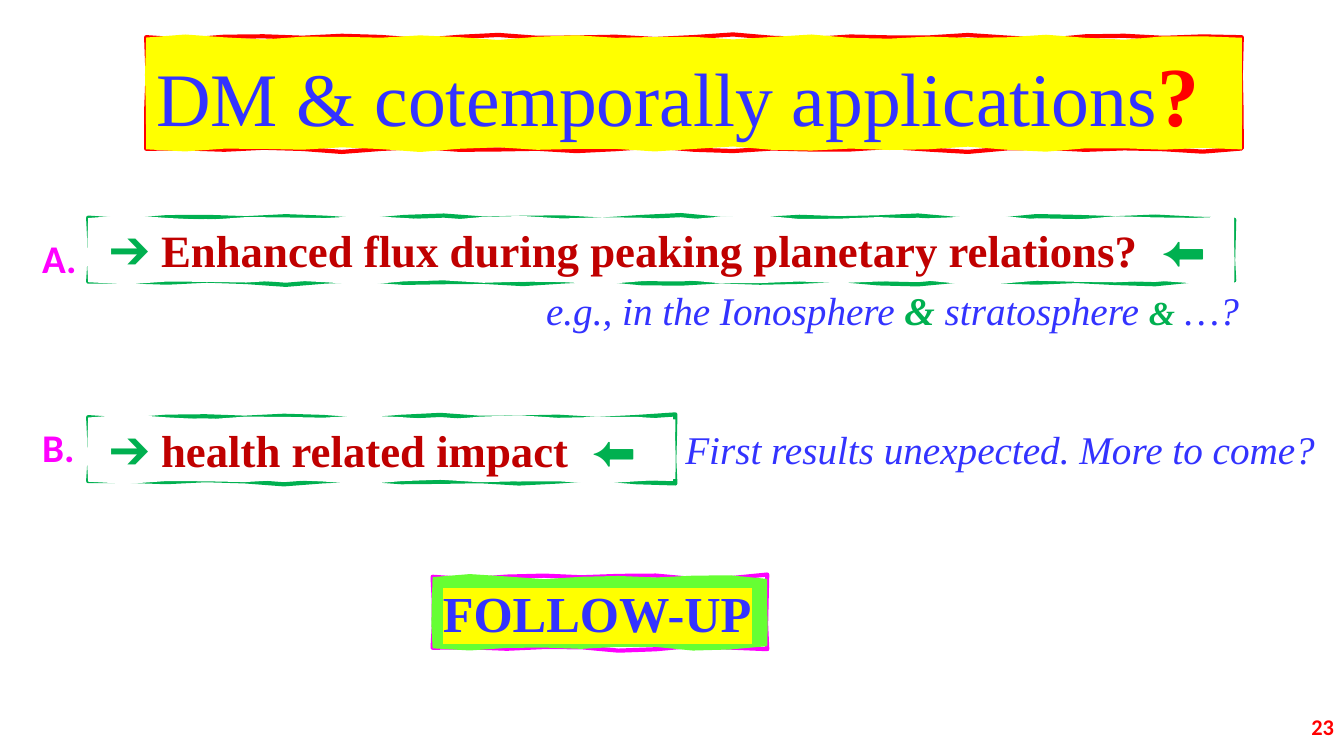
from copy import deepcopy
from dataclasses import dataclass
from math import sin

from lxml import etree
from pptx import Presentation
from pptx.dml.color import RGBColor
from pptx.enum.text import MSO_ANCHOR, PP_ALIGN
from pptx.oxml.ns import qn
from pptx.util import Pt

LEFT, MIDDLE = PP_ALIGN.LEFT, MSO_ANCHOR.MIDDLE
TITLE_ONLY = 5


@dataclass(frozen=True)
class Theme:
    serif: str = "Times New Roman"
    sans: str = "Calibri"
    blue: str = "3333FF"
    red: str = "FF0000"
    dark_red: str = "C00000"
    green: str = "00B050"
    lime: str = "66FF33"
    yellow: str = "FFFF00"
    magenta: str = "FF00FF"
    white: str = "FFFFFF"
    title: int = 54
    mark: int = 60
    closing: int = 36
    point: int = 32
    remark: int = 28
    small: int = 24
    number: int = 16
    inset: float = 7.2
    wave: float = 2
    wave_step: float = 28


THEME = Theme()


def rgb(code):
    return RGBColor.from_string(code)


# Text
def write(shape, spans, size, font=THEME.serif, bold=False, italic=False,
          left=THEME.inset, wrap=True):
    """Write one line; each span is (text, colour, overrides)."""
    frame = shape.text_frame
    frame.word_wrap = wrap
    frame.vertical_anchor = MIDDLE
    frame.margin_left, frame.margin_right = Pt(left), 0
    frame.margin_top = frame.margin_bottom = 0
    para = frame.paragraphs[0]
    para.alignment = LEFT
    para.font.name, para.font.size = font, Pt(size)
    para.font.bold, para.font.italic = bold, italic
    for text, colour, changes in spans:
        span = para.add_run()
        span.text = text
        span.font.color.rgb = rgb(colour)
        if "size" in changes:
            span.font.size = Pt(changes["size"])
        if "bold" in changes:
            span.font.bold = changes["bold"]
        if "tracking" in changes:
            span.font._element.set("spc", str(changes["tracking"] * 100))
        if "highlight" in changes:
            mark = etree.SubElement(span.font._element, qn("a:highlight"))
            etree.SubElement(mark, qn("a:srgbClr"), val=changes["highlight"])


def text_box(page, box, spans, size, **style):
    shape = page.shapes.add_textbox(*map(Pt, box))
    write(shape, spans, size, **style)


# Hand-drawn frames
def wavy_contour(box, phase):
    left, top, width, height = box

    def wave(along, side):
        shift = phase + 2 * side
        return THEME.wave * (0.6 * sin(along / 14 + shift) + 0.4 * sin(along / 24 - shift))

    steps = round(width / THEME.wave_step)
    across = [width * step / steps for step in range(steps + 1)]
    down = [height / 3, height * 2 / 3]
    points = [(left + x, top + wave(x, 0)) for x in across]
    points += [(left + width + wave(y, 1) / 2, top + y) for y in down]
    points += [(left + x, top + height + wave(x, 2)) for x in reversed(across)]
    points += [(left + wave(y, 3) / 2, top + y) for y in reversed(down)]
    return [(Pt(x), Pt(y)) for x, y in points]


def wavy_frame(page, box, fill, line):
    """Draw a wavy outline with a differently waved fill above it."""
    outline, inside = wavy_contour(box, 0), wavy_contour(box, 2.5)
    builder = page.shapes.build_freeform(*outline[0], scale=1.0)
    builder.add_line_segments(outline[1:], close=True)
    builder.move_to(*inside[0])
    builder.add_line_segments(inside[1:], close=True)
    shape = builder.convert_to_shape()
    shape.shadow.inherit = False
    shape.fill.solid()
    shape.fill.fore_color.rgb = rgb(fill)
    shape.line.color.rgb = rgb(line)
    shape.line.width = Pt(3)

    # Give the stroke and the fill a contour each
    stroke_part = next(shape.element.iter(qn("a:path")))
    fill_part = deepcopy(stroke_part)
    stroke_part.addnext(fill_part)
    half = len(stroke_part) // 2
    del stroke_part[half:]
    del fill_part[:half]
    stroke_part.set("fill", "none")
    fill_part.set("stroke", "0")
    return shape


# Regions
def title_banner(page, box):
    banner = wavy_frame(page, box, THEME.yellow, THEME.red)
    title = page.shapes.title
    title.left, title.top, title.width, title.height = map(Pt, box)
    title.element.addprevious(banner.element)
    write(title, [("DM & cotemporally applications", THEME.blue, {}),
                  ("?", THEME.red, {"size": THEME.mark, "bold": True})], THEME.title)


def point_row(page, box, letter, label_drop, claim):
    left, top, width, height = box
    text_box(page, (left - 40, top + label_drop, 40, 41), [(letter, THEME.magenta, {})],
             THEME.remark, font=THEME.sans, bold=True, wrap=False)
    frame = wavy_frame(page, box, THEME.white, THEME.green)
    write(frame, [("➔", THEME.green, {}), (" " + claim, THEME.dark_red, {}),
                  (" ", THEME.dark_red, {"tracking": 8}), ("⬅", THEME.green, {})],
          THEME.point, bold=True, left=THEME.inset + 9)


def remark(page, box, spans):
    text_box(page, box, spans, THEME.remark, italic=True, wrap=False)


def closing_frame(page, box):
    frame = wavy_frame(page, box, THEME.lime, THEME.magenta)
    write(frame, [("FOLLOW-UP", THEME.blue, {"highlight": THEME.yellow})],
          THEME.closing, bold=True, left=THEME.inset + 1)


def page_number(page, box):
    text_box(page, box, [("23", THEME.red, {})], THEME.number,
             font=THEME.sans, bold=True, left=0, wrap=False)


def main():
    deck = Presentation()
    deck.slide_width, deck.slide_height = Pt(960), Pt(540)
    page = deck.slides.add_slide(deck.slide_layouts[TITLE_ONLY])
    title_banner(page, (104.4, 26.6, 782.6, 80))
    point_row(page, (63, 155.5, 818.6, 46), "A.", 8,
              "Enhanced flux during peaking planetary relations?")
    ampersand = {"bold": True}
    remark(page, (383, 201, 517.7, 41), [
        ("e.g., in the Ionosphere ", THEME.blue, {}), ("& ", THEME.green, ampersand),
        ("stratosphere ", THEME.blue, {}),
        ("&", THEME.green, {**ampersand, "size": THEME.small}), (" …?", THEME.blue, {})])
    point_row(page, (63, 298, 419.4, 46), "B.", 1, "health related impact")
    remark(page, (482.4, 300, 468.7, 41),
           [("First results unexpected. More to come?", THEME.blue, {})])
    closing_frame(page, (309, 412, 239, 51))
    page_number(page, (936.7, 509, 18, 19.4))
    deck.save("out.pptx")


if __name__ == "__main__":
    main()
